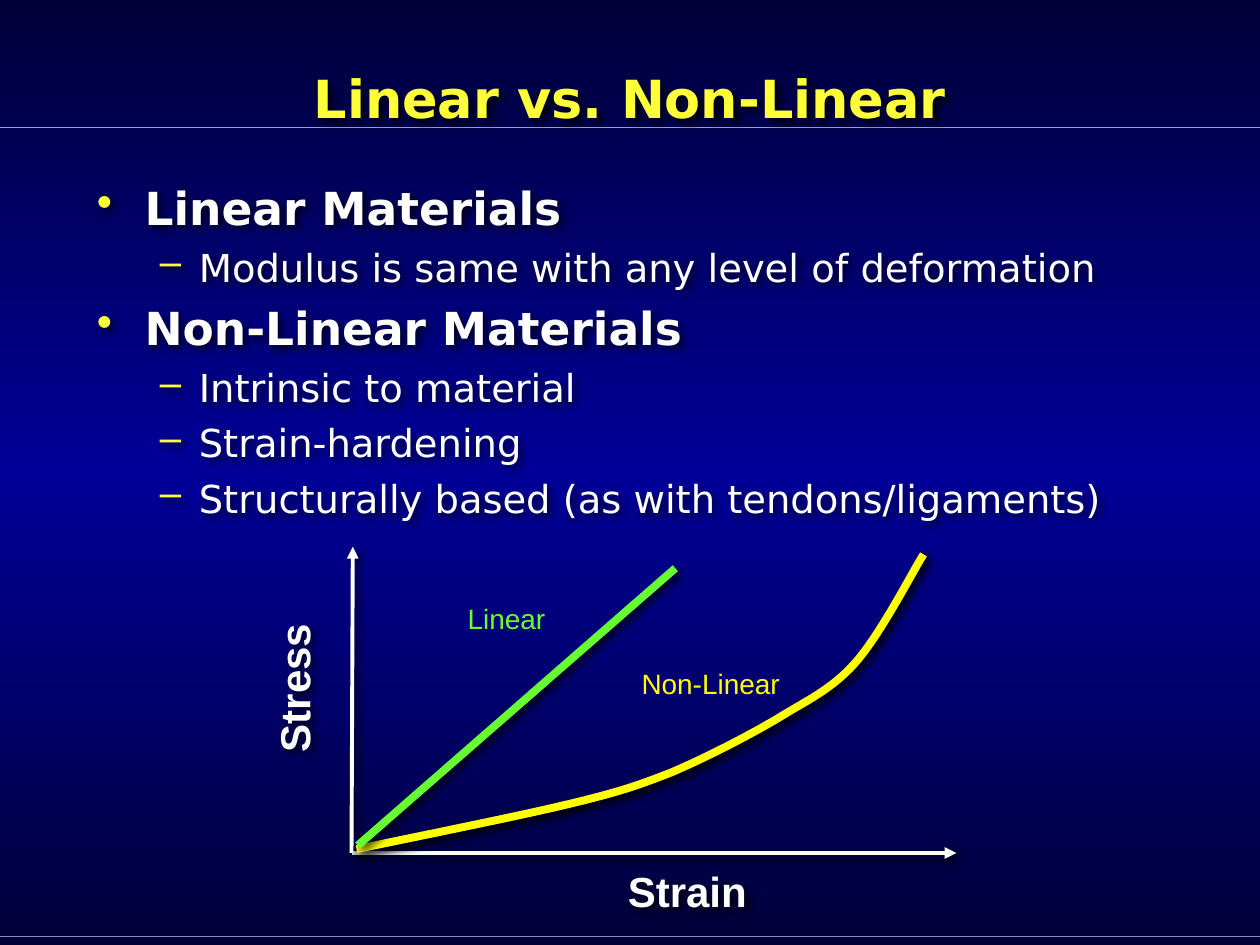
from copy import deepcopy
from dataclasses import dataclass
from typing import Optional

from lxml.etree import SubElement
from pptx import Presentation
from pptx.dml.color import RGBColor
from pptx.enum.shapes import MSO_CONNECTOR
from pptx.enum.text import MSO_ANCHOR, MSO_AUTO_SIZE, PP_ALIGN
from pptx.oxml.ns import qn
from pptx.util import Inches, Pt


@dataclass(frozen=True)
class Theme:
    edge: str = "000038"
    middle: str = "000099"
    accent: str = "FFFF39"
    white: str = "FFFFFF"
    green: str = "66FF33"
    yellow: str = "FFFF00"
    shadow: str = "000000"
    top_rule: str = "A2A2C0"
    bottom_rule: str = "8B8BB1"
    text_font: str = "DejaVu Sans"
    graph_font: str = "Arial"
    title_size: float = 30
    heading_size: float = 26
    detail_size: float = 22
    axis_size: float = 24
    curve_label_size: float = 16


THEME = Theme()


@dataclass(frozen=True)
class Label:
    text: str
    box: tuple
    size: float
    color: str
    font: str = THEME.graph_font
    bold: bool = False
    shadow: bool = False
    vertical: bool = False


@dataclass(frozen=True)
class Line:
    start: tuple
    end: tuple
    color: str
    width: float
    arrow: bool = False
    shadow: bool = True


@dataclass(frozen=True)
class Level:
    size: float
    bold: bool
    bullet: str
    margin: float
    hanging: float
    space_before: float


HEADING = Level(THEME.heading_size, True, "•", 0.38, 0.38, 6)
DETAIL = Level(THEME.detail_size, False, "–", 0.81, 0.31, 5.2)

OUTLINE = [
    (HEADING, "Linear Materials"),
    (DETAIL, "Modulus is same with any level of deformation"),
    (HEADING, "Non-Linear Materials"),
    (DETAIL, "Intrinsic to material"),
    (DETAIL, "Strain-hardening"),
    (DETAIL, "Structurally based (as with tendons/ligaments)"),
]

LABELS = [
    Label("Linear vs. Non-Linear", (0.5, 0.15, 9, 1.25), THEME.title_size,
          THEME.accent, THEME.text_font, bold=True, shadow=True),
    Label("Strain", (4.88, 6.82, 1.15, 0.5), THEME.axis_size, THEME.white,
          bold=True, shadow=True),
    Label("Stress", (2.03, 4.9, 0.6, 1.12), THEME.axis_size, THEME.white,
          bold=True, shadow=True, vertical=True),
    Label("Linear", (3.61, 4.72, 0.82, 0.37), THEME.curve_label_size, THEME.green),
    Label("Non-Linear", (4.99, 5.24, 1.3, 0.37), THEME.curve_label_size, THEME.yellow),
]

ORIGIN = (2.79, 6.77)
RULES = [
    Line((0, 7.43), (10, 7.43), THEME.bottom_rule, 0.75, shadow=False),
    Line((0, 1.01), (10, 1.01), THEME.top_rule, 0.75, shadow=False),
]
AXES = [
    Line(ORIGIN, (7.59, 6.77), THEME.white, 2.25, arrow=True),
    Line(ORIGIN, (2.8, 4.34), THEME.white, 2.25, arrow=True),
]
LINEAR = Line((2.84, 6.71), (5.36, 4.51), THEME.green, 4.5)

CURVE_START = (2.83, 6.74)
CURVE_SEGMENTS = [
    ((3.11, 6.68), (4.06, 6.49), (4.48, 6.39)),
    ((4.9, 6.29), (5.05, 6.24), (5.33, 6.13)),
    ((5.61, 6.01), (5.92, 5.85), (6.16, 5.71)),
    ((6.4, 5.56), (6.59, 5.48), (6.78, 5.27)),
    ((6.98, 5.05), (7.22, 4.58), (7.33, 4.4)),
]


def rgb(color: str) -> RGBColor:
    return RGBColor.from_string(color)


def set_effects(shape, shadow: bool, opacity: int = 75) -> None:
    properties = shape._element.spPr
    for existing in properties.findall(qn("a:effectLst")):
        properties.remove(existing)
    effects = SubElement(properties, qn("a:effectLst"))
    if shadow:
        outer = SubElement(effects, qn("a:outerShdw"), blurRad=str(Pt(5)),
                           dist=str(Pt(3)), dir="2700000", algn="ctr", rotWithShape="0")
        color = SubElement(outer, qn("a:srgbClr"), val=THEME.shadow)
        SubElement(color, qn("a:alpha"), val=str(opacity * 1000))


def paint_background(slide) -> None:
    fill = slide.background.fill
    fill.gradient()
    fill.gradient_angle = 270
    stop_list = next(slide._element.iter(qn("a:gsLst")))
    stop_list.append(deepcopy(stop_list[0]))
    colors = (THEME.edge, THEME.middle, THEME.edge)
    for index, (stop, color) in enumerate(zip(fill.gradient_stops, colors)):
        stop.position = index / 2
        stop.color.rgb = rgb(color)


def format_runs(paragraph, font: str, size: float, color: str, bold: bool) -> None:
    for run in paragraph.runs:
        run.font.name = font
        run.font.size = Pt(size)
        run.font.bold = bold
        run.font.color.rgb = rgb(color)


def draw_label(slide, label: Label) -> None:
    shape = slide.shapes.add_textbox(*map(Inches, label.box))
    frame = shape.text_frame
    frame.text = label.text
    frame.word_wrap = label.font == THEME.text_font
    frame.auto_size = MSO_AUTO_SIZE.NONE
    frame.vertical_anchor = MSO_ANCHOR.MIDDLE
    if label.vertical:
        frame._txBody.bodyPr.set("vert", "vert270")
    paragraph = frame.paragraphs[0]
    paragraph.alignment = PP_ALIGN.CENTER
    format_runs(paragraph, label.font, label.size, label.color, label.bold)
    if label.shadow:
        set_effects(shape, True)


def draw_outline(slide) -> None:
    shape = slide.shapes.add_textbox(Inches(0.67), Inches(1.38), Inches(8.81), Inches(3.05))
    frame = shape.text_frame
    frame.word_wrap = True
    for index, (level, text) in enumerate(OUTLINE):
        paragraph = frame.add_paragraph() if index else frame.paragraphs[0]
        paragraph.text = text
        paragraph.level = int(level is DETAIL)
        if index:
            paragraph.space_before = Pt(level.space_before)
        properties = paragraph._p.get_or_add_pPr()
        properties.set("marL", str(Inches(level.margin)))
        properties.set("indent", str(-Inches(level.hanging)))
        bullet_color = SubElement(properties, qn("a:buClr"))
        SubElement(bullet_color, qn("a:srgbClr"), val=THEME.accent)
        SubElement(properties, qn("a:buChar"), char=level.bullet)
        format_runs(paragraph, THEME.text_font, level.size, THEME.white, level.bold)
    set_effects(shape, True)


def draw_line(slide, line: Line) -> None:
    shape = slide.shapes.add_connector(
        MSO_CONNECTOR.STRAIGHT, *map(Inches, line.start + line.end))
    shape.line.color.rgb = rgb(line.color)
    shape.line.width = Pt(line.width)
    if line.arrow:
        SubElement(shape._element.spPr.find(qn("a:ln")), qn("a:tailEnd"), type="triangle")
    set_effects(shape, line.shadow)


def curve_points(steps: int = 16) -> list:
    points, start = [], CURVE_START
    for first, second, end in CURVE_SEGMENTS:
        for step in range(1, steps + 1):
            t = step / steps
            weights = ((1 - t) ** 3, 3 * t * (1 - t) ** 2, 3 * t * t * (1 - t), t ** 3)
            controls = (start, first, second, end)
            points.append(tuple(
                Inches(sum(w * c[axis] for w, c in zip(weights, controls))) for axis in (0, 1)))
        start = end
    return points


def draw_curve(slide) -> None:
    builder = slide.shapes.build_freeform(*map(Inches, CURVE_START))
    builder.add_line_segments(curve_points(), close=False)
    shape = builder.convert_to_shape()
    shape.fill.background()
    shape.line.color.rgb = rgb(THEME.yellow)
    shape.line.width = Pt(4.5)
    SubElement(shape._element.spPr.find(qn("a:ln")), qn("a:round"))
    set_effects(shape, True, opacity=100)


def main(title: Optional[Label] = LABELS[0]) -> None:
    presentation = Presentation()
    presentation.slide_width, presentation.slide_height = Inches(10), Inches(7.5)
    slide = presentation.slides.add_slide(presentation.slide_layouts[6])
    paint_background(slide)
    for rule in RULES:
        draw_line(slide, rule)
    draw_label(slide, title)
    draw_outline(slide)
    for axis in AXES:
        draw_line(slide, axis)
    draw_curve(slide)
    draw_line(slide, LINEAR)
    for label in LABELS[1:]:
        draw_label(slide, label)
    presentation.save("out.pptx")


if __name__ == "__main__":
    main()
